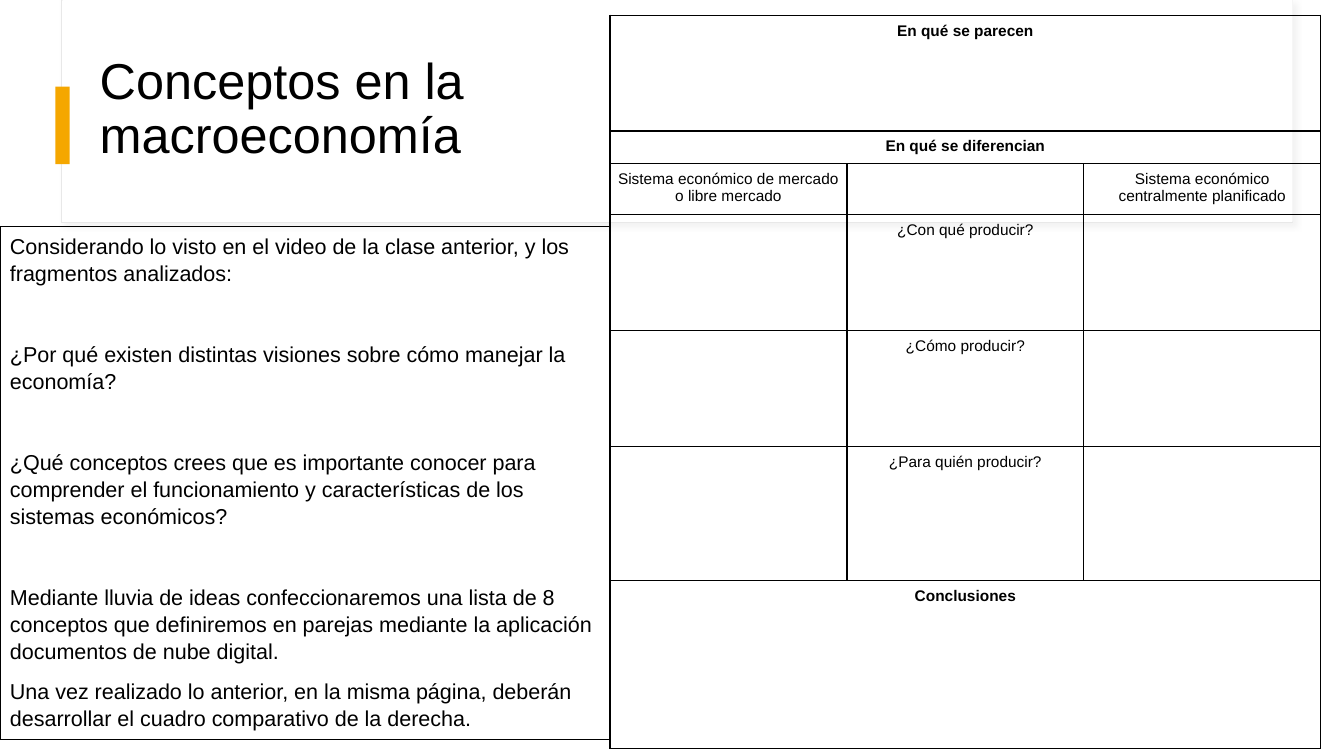
"""Builds the slide on macroeconomic concepts with its comparison table."""
from lxml.etree import SubElement
from pptx import Presentation
from pptx.dml.color import RGBColor
from pptx.enum.shapes import MSO_SHAPE
from pptx.enum.text import MSO_ANCHOR, PP_ALIGN
from pptx.oxml.ns import qn
from pptx.util import Inches, Pt

TITLE = "Conceptos en la macroeconomía"
QUESTIONS = [
    ("Considerando lo visto en el video de la clase anterior, y los fragmentos analizados:", 0),
    ("¿Por qué existen distintas visiones sobre cómo manejar la economía?", 38.7),
    ("¿Qué conceptos crees que es importante conocer para comprender el funcionamiento "
     "y características de los sistemas económicos?", 38.7),
    ("Mediante lluvia de ideas confeccionaremos una lista de 8 conceptos que definiremos "
     "en parejas mediante la aplicación documentos de nube digital.", 38.7),
    ("Una vez realizado lo anterior, en la misma página, deberán desarrollar el cuadro "
     "comparativo de la derecha.", 10),
]
COMPARISON = [
    (1.15, ["En qué se parecen"]),
    (0.3, ["En qué se diferencian"]),
    (0.47, ["Sistema económico de mercado o libre mercado", "",
            "Sistema económico centralmente planificado"]),
    (1.15, ["", "¿Con qué producir?", ""]),
    (1.15, ["", "¿Cómo producir?", ""]),
    (1.33, ["", "¿Para quién producir?", ""]),
    (1.67, ["Conclusiones"]),
]
COLUMN_WIDTH = 2.35
FONT, BLACK, WHITE = "Arial", "000000", "FFFFFF"


def color(hex_code):
    return RGBColor.from_string(hex_code)


def style(paragraph, size, bold=False):
    for run in paragraph.runs:
        run.font.name, run.font.size, run.font.bold = FONT, Pt(size), bold
        run.font.color.rgb = color(BLACK)


def add_box(slide, box, fill=None, line=None):
    shape = slide.shapes.add_shape(MSO_SHAPE.RECTANGLE, *map(Inches, box))
    shape.shadow.inherit = False
    if fill:
        shape.fill.solid()
        shape.fill.fore_color.rgb = color(fill)
    else:
        shape.fill.background()
    if line:
        shape.line.color.rgb = color(line)
        shape.line.width = Pt(0.75)
    else:
        shape.line.fill.background()
    return shape


def add_shadow(shape, hex_code):
    effects = shape._element.spPr.find(qn("a:effectLst"))
    shadow = SubElement(effects, qn("a:outerShdw"), blurRad=str(Pt(4)), dist=str(Pt(3)),
                        dir="2700000", algn="tl", rotWithShape="0")
    tint = SubElement(shadow, qn("a:srgbClr"), val=hex_code)
    SubElement(tint, qn("a:alpha"), val="30000")


def add_borders(cell):
    properties = cell._tc.get_or_add_tcPr()
    for place, side in enumerate(("a:lnL", "a:lnR", "a:lnT", "a:lnB")):
        border = properties.makeelement(qn(side), {"w": str(Pt(1))})
        fill = SubElement(border, qn("a:solidFill"))
        SubElement(fill, qn("a:srgbClr"), val=BLACK)
        properties.insert(place, border)


def add_title(slide):
    title = slide.shapes.add_textbox(*map(Inches, (0.89, 0.45, 5.16, 1.29))).text_frame
    title.word_wrap = True
    title.vertical_anchor = MSO_ANCHOR.MIDDLE
    title.text = TITLE
    title.paragraphs[0].line_spacing = 0.9
    style(title.paragraphs[0], 36)


def add_questions(slide):
    questions = add_box(slide, (0, 2.25, 6.05, 5.09), line=BLACK).text_frame
    questions.word_wrap = True
    questions.vertical_anchor = MSO_ANCHOR.TOP
    questions.text = "\n".join(text for text, _ in QUESTIONS)
    for paragraph, (_, gap) in zip(questions.paragraphs, QUESTIONS):
        paragraph.alignment = PP_ALIGN.LEFT
        paragraph.line_spacing = 1.04
        paragraph.space_before = Pt(gap)
        style(paragraph, 15.4)


def add_comparison(slide):
    height = sum(row_height for row_height, _ in COMPARISON)
    table = slide.shapes.add_table(
        len(COMPARISON), 3, Inches(6.05), Inches(0.15),
        Inches(3 * COLUMN_WIDTH), Inches(height)).table
    table.first_row = table.horz_banding = False
    for column in table.columns:
        column.width = Inches(COLUMN_WIDTH)
    for r, (row_height, texts) in enumerate(COMPARISON):
        table.rows[r].height = Inches(row_height)
        heading = len(texts) == 1
        for c in range(3):
            cell = table.cell(r, c)
            cell.fill.background()
            add_borders(cell)
            cell.margin_left = cell.margin_right = Inches(0.07)
            cell.margin_top = cell.margin_bottom = Inches(0.07)
        if heading:
            table.cell(r, 0).merge(table.cell(r, 2))
        for c, text in enumerate(texts):
            cell = table.cell(r, c)
            cell.text_frame.text = text
            cell.text_frame.paragraphs[0].alignment = PP_ALIGN.CENTER
            style(cell.text_frame.paragraphs[0], 11, heading)


def main():
    deck = Presentation()
    deck.slide_width, deck.slide_height = Inches(13.33), Inches(7.5)
    slide = deck.slides.add_slide(deck.slide_layouts[6])
    header = add_box(slide, (0.61, 0, 12.21, 2.21), WHITE, "E8E8E8")
    add_shadow(header, "D8D8D8")
    add_box(slide, (0.62, 0, 12.2, 2.2), WHITE)
    add_box(slide, (0.55, 0.86, 0.14, 0.77), "F5A700")
    add_title(slide)
    add_questions(slide)
    add_comparison(slide)
    deck.save("out.pptx")


if __name__ == "__main__":
    main()
